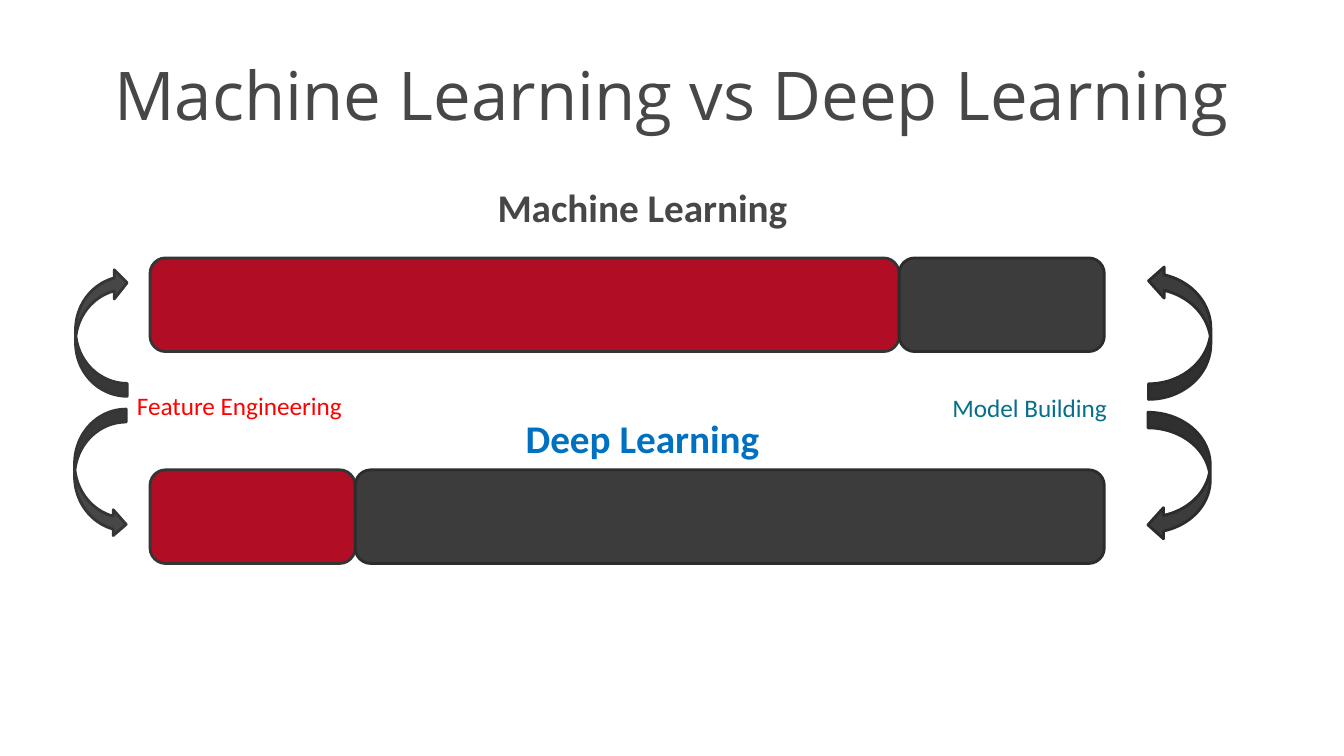
from pptx import Presentation
from pptx.dml.color import RGBColor
from pptx.enum.shapes import MSO_SHAPE
from pptx.enum.text import MSO_ANCHOR, PP_ALIGN
from pptx.util import Cm, Pt

GREY = RGBColor(0x47, 0x47, 0x47)
GREY_EDGE = RGBColor(0x35, 0x35, 0x35)
CRIMSON = RGBColor(0xB1, 0x0D, 0x24)
CHARCOAL = RGBColor(0x3C, 0x3C, 0x3C)
CHARCOAL_EDGE = RGBColor(0x2C, 0x2C, 0x2C)
RED = RGBColor(0xFF, 0x00, 0x00)
TEAL = RGBColor(0x07, 0x6F, 0x8A)
BLUE = RGBColor(0x00, 0x70, 0xC0)

TITLE = "Machine Learning vs Deep Learning"

# heading, colour, heading top, bar top, share of feature engineering
APPROACHES = [
    ("Machine Learning", GREY, 4.5, 6.5, 0.785),
    ("Deep Learning", BLUE, 10.31, 11.84, 0.215),
]
# text, colour, (left, top, width, height)
STAGES = [
    ("Feature Engineering", RED, (3.2, 9.7, 5.8, 1.02)),
    ("Model Building", TEAL, (23.75, 9.75, 5.18, 1.12)),
]
# shape, (left, top, width, height), fill, edge, rotation, adjustments, flipped
ARROWS = [
    (MSO_SHAPE.CURVED_RIGHT_ARROW, (1.88, 10.31, 1.3, 3.23), GREY, GREY_EDGE, 0, (), False),
    (MSO_SHAPE.CURVED_DOWN_ARROW, (0.94, 7.72, 3.23, 1.3), GREY, GREY_EDGE, 270,
     (0.25, 0.567, 0.25), False),
    (MSO_SHAPE.CURVED_LEFT_ARROW, (28.93, 10.39, 1.57, 3.23), CHARCOAL, CHARCOAL_EDGE,
     0, (), False),
    (MSO_SHAPE.CURVED_DOWN_ARROW, (28.04, 7.59, 3.38, 1.57), CHARCOAL, CHARCOAL_EDGE,
     270, (), True),
]
BAR_LEFT, BAR_WIDTH, BAR_HEIGHT = 3.78, 24.05, 2.36
HEADING_LEFT, HEADING_WIDTH, HEADING_HEIGHT = 8.15, 16.08, 1.45


def write(frame, text, size, color, font="Calibri", bold=False, align=PP_ALIGN.LEFT,
          anchor=MSO_ANCHOR.TOP):
    frame.word_wrap = True
    frame.vertical_anchor = anchor
    paragraph = frame.paragraphs[0]
    paragraph.alignment = align
    run = paragraph.add_run()
    run.text = text
    run.font.name = font
    run.font.size = Pt(size)
    run.font.bold = bold
    run.font.color.rgb = color


def add_filled(slide, kind, box, fill, edge):
    shape = slide.shapes.add_shape(kind, *map(Cm, box))
    shape.shadow.inherit = False
    shape.fill.solid()
    shape.fill.fore_color.rgb = fill
    shape.line.color.rgb = edge
    shape.line.width = Pt(2)
    return shape


def add_label(slide, box, text, size, color, **text_format):
    label = slide.shapes.add_textbox(*map(Cm, box))
    write(label.text_frame, text, size, color, **text_format)


def main():
    deck = Presentation()
    deck.slide_width, deck.slide_height = Cm(33.87), Cm(19.05)
    slide = deck.slides.add_slide(deck.slide_layouts[5])

    title = slide.shapes.title
    title.left, title.top, title.width, title.height = map(Cm, (1.7, 0.76, 30.48, 3.18))
    write(title.text_frame, TITLE, 48, GREY, font="Open Sans", align=PP_ALIGN.CENTER,
          anchor=MSO_ANCHOR.MIDDLE)

    for heading, color, heading_top, bar_top, share in APPROACHES:
        feature_width = BAR_WIDTH * share
        add_filled(slide, MSO_SHAPE.ROUNDED_RECTANGLE,
                   (BAR_LEFT, bar_top, feature_width, BAR_HEIGHT), CRIMSON, GREY_EDGE)
        add_filled(slide, MSO_SHAPE.ROUNDED_RECTANGLE,
                   (BAR_LEFT + feature_width, bar_top, BAR_WIDTH - feature_width, BAR_HEIGHT),
                   CHARCOAL, CHARCOAL_EDGE)
        add_label(slide, (HEADING_LEFT, heading_top, HEADING_WIDTH, HEADING_HEIGHT),
                  heading, 28, color, bold=True, align=PP_ALIGN.CENTER)

    for stage, color, box in STAGES:
        add_label(slide, box, stage, 18, color)

    for kind, box, fill, edge, rotation, adjustments, flipped in ARROWS:
        arrow = add_filled(slide, kind, box, fill, edge)
        arrow.rotation = rotation
        for index, value in enumerate(adjustments):
            arrow.adjustments[index] = value
        if flipped:
            arrow._element.spPr.get_or_add_xfrm().set("flipV", "1")

    deck.save("out.pptx")


if __name__ == "__main__":
    main()
